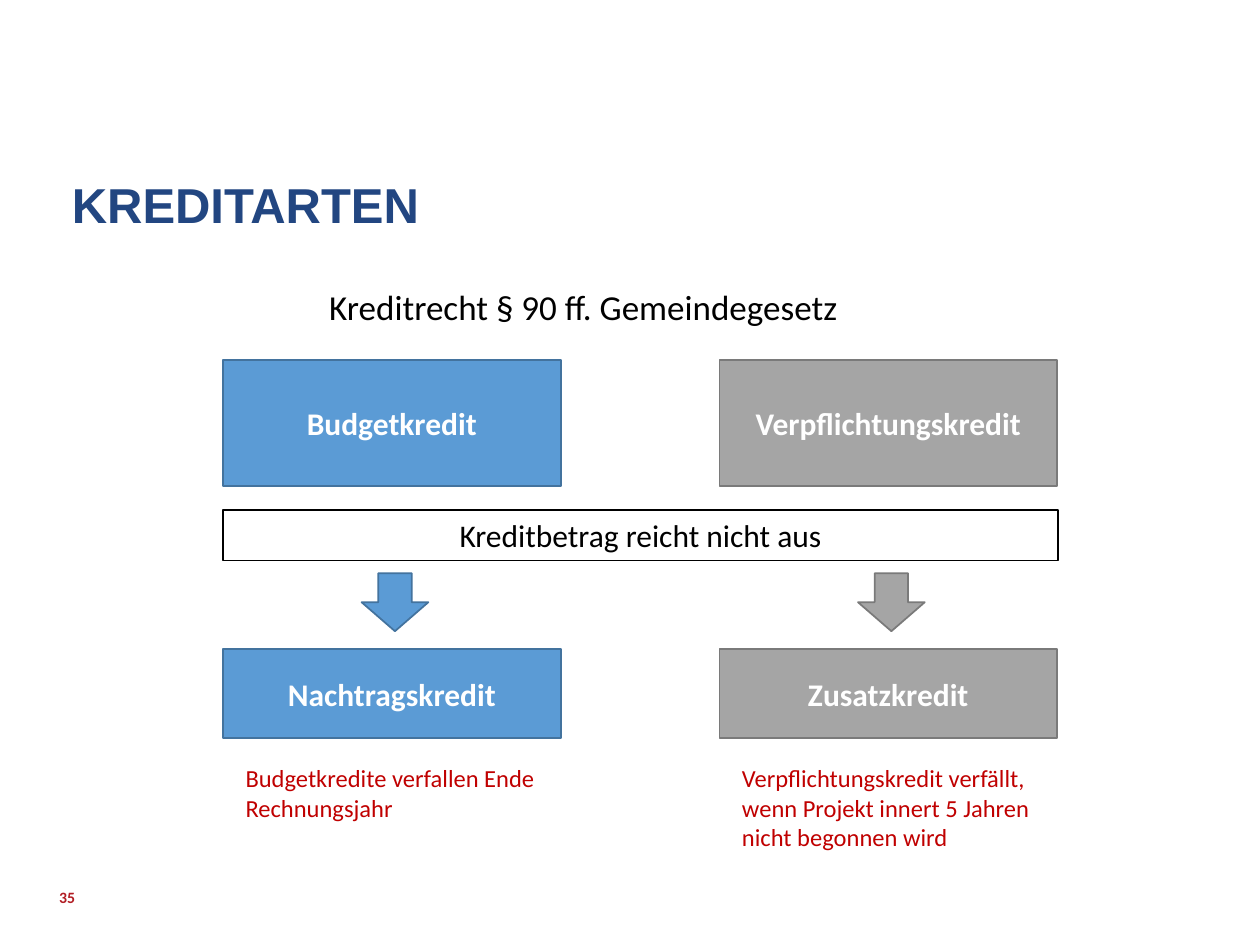
from lxml import etree
from pptx import Presentation
from pptx.dml.color import RGBColor
from pptx.enum.shapes import MSO_SHAPE
from pptx.enum.text import MSO_ANCHOR, MSO_AUTO_SIZE, PP_ALIGN
from pptx.oxml.ns import qn
from pptx.util import Inches, Pt

RECT, ARROW = MSO_SHAPE.RECTANGLE, MSO_SHAPE.DOWN_ARROW
TOP, MIDDLE = MSO_ANCHOR.TOP, MSO_ANCHOR.MIDDLE
LEFT, CENTER = PP_ALIGN.LEFT, PP_ALIGN.CENTER
NO_FIT = MSO_AUTO_SIZE.NONE

COLORS = {
    "title": "224681", "text": "000000", "white": "FFFFFF",
    "blue": "5B9BD5", "blue_line": "43739E",
    "gray": "A5A5A5", "gray_line": "7A7A7A",
    "note": "C00000", "number": "B21D24",
}

TITLE = "KREDITARTEN"
SUBTITLE = "Kreditrecht § 90 ff. Gemeindegesetz"
CONDITION = "Kreditbetrag reicht nicht aus"
PAGE_NUMBER = "35"
CREDITS = [
    {"color": "blue", "credit": "Budgetkredit", "extra": "Nachtragskredit",
     "note": "Budgetkredite verfallen Ende Rechnungsjahr",
     "note_size": (2.52, 0.57)},
    {"color": "gray", "credit": "Verpflichtungskredit", "extra": "Zusatzkredit",
     "note": "Verpflichtungskredit verfällt, wenn Projekt innert 5 Jahren "
             "nicht begonnen wird",
     "note_size": (2.61, 0.81)},
]

FORMATS = {
    "title": {"size": Pt(28), "name": "Arial", "bold": True},
    "subtitle": {"size": Pt(20), "name": "Calibri", "bold": False},
    "box": {"size": Pt(18), "name": "Calibri", "bold": True},
    "condition": {"size": Pt(18), "name": "Calibri", "bold": False},
    "note": {"size": Pt(14), "name": "Calibri", "bold": False},
    "number": {"size": Pt(9), "name": "Calibri", "bold": True},
}

COL_LEFT, COL_STEP, BOX_W = 1.77, 3.94, 2.68
CREDIT_TOP, CREDIT_H = 2.86, 1
EXTRA_TOP, EXTRA_H = 5.15, 0.71


def rgb(name):
    return RGBColor.from_string(COLORS[name])


def write(sp, text, style, color, align=LEFT, anchor=TOP):
    tf = sp.text_frame
    tf.word_wrap, tf.auto_size, tf.vertical_anchor = True, NO_FIT, anchor
    p = tf.paragraphs[0]
    p.alignment = align
    r = p.add_run()
    r.text = text
    for key, value in FORMATS[style].items():
        setattr(r.font, key, value)
    r.font.color.rgb = rgb(color)
    return p


def place(sp, *box):
    for key, value in zip(("left", "top", "width", "height"), box):
        setattr(sp, key, Inches(value))


def add_block(kind, box, fill, line):
    sp = s.shapes.add_shape(kind, *map(Inches, box))
    sp.shadow.inherit = False
    sp.fill.solid()
    sp.fill.fore_color.rgb = rgb(fill)
    sp.line.color.rgb = rgb(line)
    sp.line.width = Pt(1)
    return sp


def add_text(box, *args, **kwargs):
    sp = s.shapes.add_textbox(*map(Inches, box))
    write(sp, *args, **kwargs)
    return sp


prs = Presentation()
prs.slide_width, prs.slide_height = Inches(10), Inches(7.5)
s = prs.slides.add_slide(prs.slide_layouts[1])

title, body = s.placeholders
place(title, 0.47, 1.39, 7.64, 0.94)
write(title, TITLE, "title", "title").line_spacing = 0.9

place(body, 1.14, 2.25, 7.64, 3.07)
body.text_frame.margin_right = Inches(0.76)
p = write(body, SUBTITLE, "subtitle", "text", CENTER)
p.line_spacing, p.space_before = 0.9, Pt(0)
pPr = p._p.get_or_add_pPr()
pPr.set("marL", "0")
pPr.set("indent", "0")
etree.SubElement(pPr, qn("a:buNone"))

number = add_text((0.47, 6.92, 2.25, 0.4), PAGE_NUMBER, "number", "number",
                  anchor=MIDDLE)
for side in ("left", "top", "right", "bottom"):
    setattr(number.text_frame, "margin_" + side, 0)

for i, item in enumerate(CREDITS):
    x = COL_LEFT + i * COL_STEP
    colors = item["color"], item["color"] + "_line"
    for key, top, height in (("credit", CREDIT_TOP, CREDIT_H),
                             ("extra", EXTRA_TOP, EXTRA_H)):
        sp = add_block(RECT, (x, top, BOX_W, height), *colors)
        write(sp, item[key], "box", "white", CENTER, MIDDLE)
    add_block(ARROW, (x + 1.1, 4.55, 0.53, 0.46), *colors)
    add_text((x + 0.08, 6.01, *item["note_size"]), item["note"], "note", "note")

bar = add_block(RECT, (COL_LEFT, 4.05, 6.63, 0.4), "white", "text")
write(bar, CONDITION, "condition", "text", CENTER)

prs.save("out.pptx")
